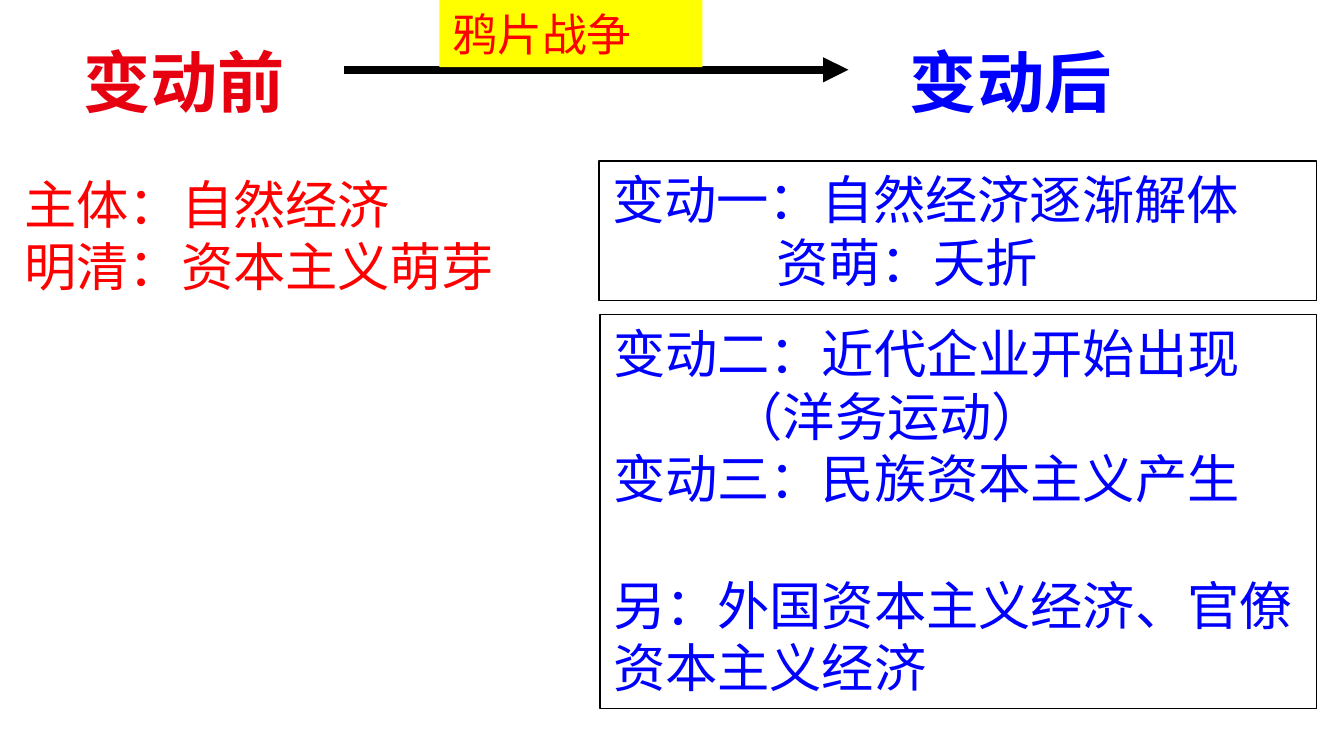
from lxml import etree
from pptx import Presentation
from pptx.dml.color import RGBColor
from pptx.enum import shapes, text
from pptx.oxml import ns
from pptx.util import Pt

COLORS = {"black": "000000", "blue": "0000FF", "red": "FF0000",
          "crimson": "E60010", "yellow": "FFFF00"}


def color(name):
    return RGBColor.from_string(COLORS[name])


def write(sp, lines, size, font, ink, bold=False, align=text.PP_ALIGN.LEFT):
    tf = sp.text_frame
    tf.word_wrap = True
    tf.vertical_anchor = text.MSO_ANCHOR.TOP
    for i, (line, indent, before) in enumerate(lines):
        p = tf.paragraphs[0] if i == 0 else tf.add_paragraph()
        p.text = line
        p.alignment = align
        if indent:
            p._p.get_or_add_pPr().set("marL", str(Pt(indent)))
        if before:
            p.space_before = Pt(before)
        p.font.size = Pt(size)
        p.font.name = font
        p.font.bold = bold
        p.font.color.rgb = color(ink)
        for r in p.runs:
            ea = etree.SubElement(r._r.get_or_add_rPr(), ns.qn("a:ea"))
            ea.set("typeface", font)


prs = Presentation()
prs.slide_width, prs.slide_height = Pt(720), Pt(405)
s = prs.slides.add_slide(prs.slide_layouts[6])

arrow = s.shapes.add_connector(shapes.MSO_CONNECTOR.STRAIGHT, Pt(184.5), Pt(37.4), Pt(454.5), Pt(37.4))
arrow.line.color.rgb = color("black")
arrow.line.width = Pt(4.5)
etree.SubElement(arrow.line._get_or_add_ln(), ns.qn("a:tailEnd")).set("type", "triangle")
etree.SubElement(arrow._element.spPr, ns.qn("a:effectLst"))

for title, left, ink in [("变动前", 41.8, "crimson"), ("变动后", 484.5, "blue")]:
    sp = s.shapes.add_textbox(Pt(left), Pt(18), Pt(113.8), Pt(39.6))
    sp.text_frame.margin_left = sp.text_frame.margin_right = Pt(0)
    write(sp, [(title, 0, 0)], 36, "Noto Sans CJK SC", ink, True, text.PP_ALIGN.CENTER)

before_box = s.shapes.add_textbox(Pt(6), Pt(88.6), Pt(300), Pt(75))
write(before_box, [("主体：自然经济", 0, 0), ("明清：资本主义萌芽", 0, 0)], 28, "Arial", "red")

boxes = [
    (321, 86.2, 384.5, 75, None, 28, "blue",
     [("变动一：自然经济逐渐解体", 0, 0), ("资萌：夭折", 88, 0)]),
    (321.4, 168.5, 384, 211, None, 28, "blue",
     [("变动二：近代企业开始出现", 0, 0), ("（洋务运动）", 63, 0),
      ("变动三：民族资本主义产生", 0, 0),
      ("另：外国资本主义经济、官僚资本主义经济", 0, 34)]),
    (235.4, 0, 141, 36, "yellow", 24, "red", [("鸦片战争", 0, 0)]),
]
for left, top, width, height, fill, size, ink, lines in boxes:
    sp = s.shapes.add_shape(shapes.MSO_SHAPE.RECTANGLE, Pt(left), Pt(top), Pt(width), Pt(height))
    sp.shadow.inherit = False
    if fill:
        sp.fill.solid()
        sp.fill.fore_color.rgb = color(fill)
        sp.line.fill.background()
    else:
        sp.fill.background()
        sp.line.color.rgb = color("black")
        sp.line.width = Pt(0.75)
    write(sp, lines, size, "Arial", ink)

prs.save("out.pptx")
